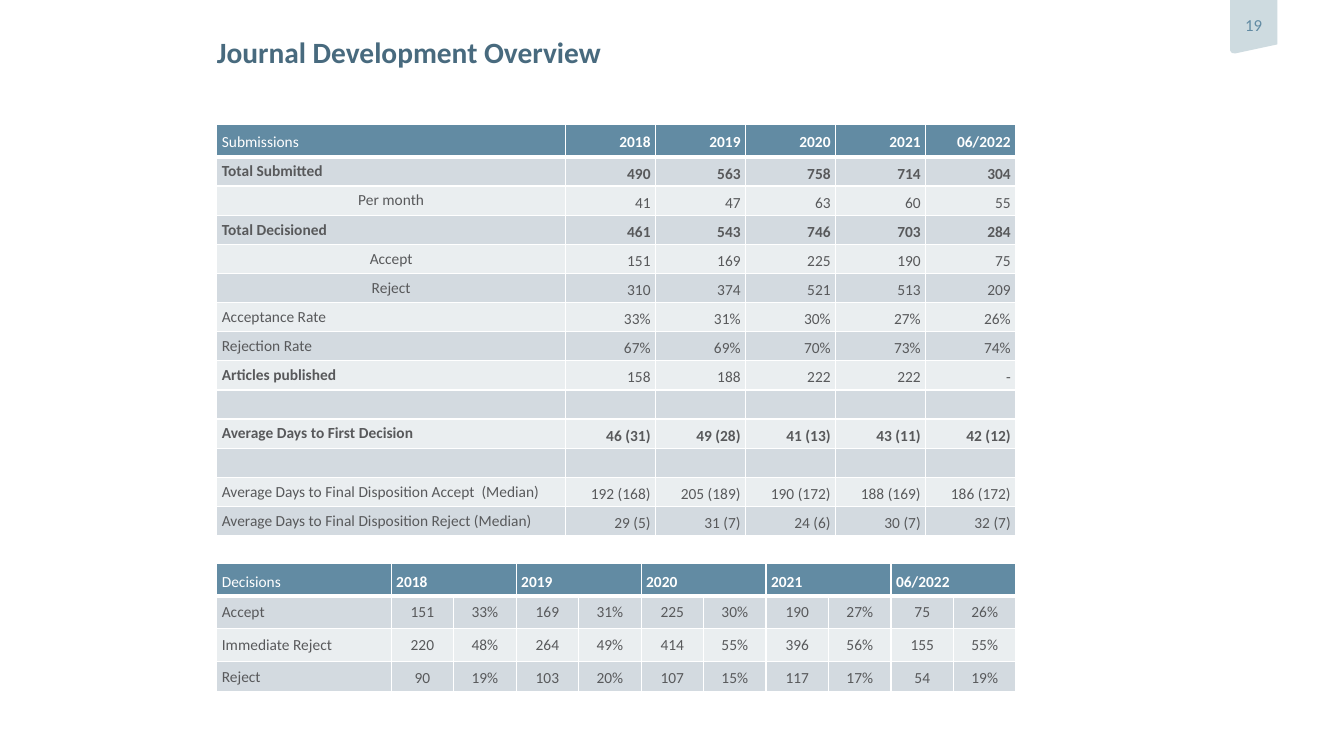
from lxml import etree
from pptx import Presentation
from pptx import util as u
from pptx.dml.color import RGBColor
from pptx.enum import text
from pptx.oxml import ns

WHITE = RGBColor(0xFF, 0xFF, 0xFF)
BLUE = RGBColor(0x62, 0x8B, 0xA3)
NAVY = RGBColor(0x48, 0x6A, 0x7E)
PALE = RGBColor(0xCE, 0xDB, 0xE0)
GRAY = RGBColor(0x58, 0x59, 0x5B)
BANDS = RGBColor(0xD3, 0xDA, 0xE0), RGBColor(0xEA, 0xEE, 0xF0)
LEFT, MID, RIGHT = text.PP_ALIGN.LEFT, text.PP_ALIGN.CENTER, text.PP_ALIGN.RIGHT

YEARS = ["2018", "2019", "2020", "2021", "06/2022"]
BOLD = "Total Submitted", "Total Decisioned", "Average Days to First Decision"
INNER = "Per month", "Accept", "Reject"
BLANK = [""] * 6
SUBMITS = [
    ["Total Submitted", "490", "563", "758", "714", "304"],
    ["Per month", "41", "47", "63", "60", "55"],
    ["Total Decisioned", "461", "543", "746", "703", "284"],
    ["Accept", "151", "169", "225", "190", "75"],
    ["Reject", "310", "374", "521", "513", "209"],
    ["Acceptance Rate", "33%", "31%", "30%", "27%", "26%"],
    ["Rejection Rate", "67%", "69%", "70%", "73%", "74%"],
    ["Articles published", "158", "188", "222", "222", "-"],
    BLANK,
    ["Average Days to First Decision", "46 (31)", "49 (28)", "41 (13)", "43 (11)", "42 (12)"],
    BLANK,
    ["Average Days to Final Disposition Accept  (Median)",
     "192 (168)", "205 (189)", "190 (172)", "188 (169)", "186 (172)"],
    ["Average Days to Final Disposition Reject (Median)",
     "29 (5)", "31 (7)", "24 (6)", "30 (7)", "32 (7)"],
]
VERDICTS = [
    ["Accept", "151", "33%", "169", "31%", "225", "30%", "190", "27%", "75", "26%"],
    ["Immediate Reject", "220", "48%", "264", "49%", "414", "55%", "396", "56%", "155", "55%"],
    ["Reject", "90", "19%", "103", "20%", "107", "15%", "117", "17%", "54", "19%"],
]


class Deck:
    """Style and current slide; lengths are percent of slide width and height."""
    face, size = "Calibri", 11

    def __init__(self):
        self.prs = Presentation()
        self.prs.slide_width, self.prs.slide_height = u.Inches(13.33), u.Inches(7.5)
        self.slide = self.prs.slides.add_slide(self.prs.slide_layouts[5])

    def x(self, part):
        return u.Emu(round(self.prs.slide_width * part / 100))

    def y(self, part):
        return u.Emu(round(self.prs.slide_height * part / 100))

    def label(self, frame, words, color, size=size, bold=False, align=LEFT, pitch=None):
        para = frame.paragraphs[0]
        para.text, para.alignment = words, align
        if pitch:
            para.line_spacing = pitch
        font = para.font
        font.name, font.size, font.bold = self.face, u.Pt(size), bold
        font.color.rgb = color
        if not words:
            etree.SubElement(para._p, ns.qn("a:endParaRPr"), sz=str(size * 100))

    def pad(self, frame, bottom=0):
        frame.margin_left = frame.margin_right = frame.margin_top = 0
        frame.margin_bottom = u.Inches(bottom)

    def title(self, words, left, top, wide, high):
        box = self.slide.shapes.title
        box.left, box.top = self.x(left), self.y(top)
        box.width, box.height = self.x(wide), self.y(high)
        frame = box.text_frame
        self.pad(frame)
        frame.auto_size = text.MSO_AUTO_SIZE.NONE
        frame.vertical_anchor = text.MSO_ANCHOR.TOP
        self.label(frame, words, NAVY, 21, True)

    def tag(self, words, dots):
        spots = [(self.x(a), self.y(b)) for a, b in dots]
        pen = self.slide.shapes.build_freeform(*spots[0])
        pen.add_line_segments(spots[1:], close=True)
        shape = pen.convert_to_shape()
        shape.shadow.inherit = False
        shape.fill.solid()
        shape.fill.fore_color.rgb = PALE
        shape.line.fill.background()
        frame = shape.text_frame
        self.pad(frame, 0.04)
        frame.word_wrap = False
        frame.vertical_anchor = text.MSO_ANCHOR.MIDDLE
        self.label(frame, words, BLUE, 12, align=MID)

    def grid(self, left, top, cols, rows):
        frame = self.slide.shapes.add_table(
            len(rows), len(cols), self.x(left), self.y(top),
            self.x(sum(cols)), self.y(sum(rows)))
        table = frame.table
        table.horz_banding = False
        for col, wide in zip(table.columns, cols):
            col.width = self.x(wide)
        for row, high in zip(table.rows, rows):
            row.height = self.y(high)
        return table

    def cell(self, cell, fill, words, color, side=0.05, edge=0.05, base=1,
             anchor=text.MSO_ANCHOR.MIDDLE, **look):
        cell.margin_left = cell.margin_right = u.Inches(side)
        cell.margin_top = cell.margin_bottom = u.Inches(edge)
        cell.vertical_anchor = anchor
        # White rules go ahead of the fill
        for name, wide in zip(("lnL", "lnR", "lnT", "lnB"), (1, 1, 1, base)):
            line = etree.SubElement(cell._tc.get_or_add_tcPr(), ns.qn("a:" + name),
                                    w=str(u.Pt(wide)))
            paint = etree.SubElement(line, ns.qn("a:solidFill"))
            etree.SubElement(paint, ns.qn("a:srgbClr"), val=str(WHITE))
        cell.fill.solid()
        cell.fill.fore_color.rgb = fill
        self.label(cell.text_frame, words, color, **look)

    def head(self, table, words, align, span=1):
        self.cell(table.cell(0, 0), BLUE, words, WHITE, base=3, pitch=1.2)
        for i, year in enumerate(YEARS):
            first = 1 + i * span
            for col in range(first, first + span):
                self.cell(table.cell(0, col), BLUE, year if col == first else "",
                          WHITE, base=3, bold=True, align=align, pitch=1.2)
            if span > 1:
                table.cell(0, first).merge(table.cell(0, first + span - 1))

    def body(self, table, data, inner=(), **look):
        for r, (name, *values) in enumerate(data, 1):
            fill = BANDS[(r - 1) % 2]
            bold = name in BOLD
            self.cell(table.cell(r, 0), fill, name, GRAY,
                      bold=bold or name == "Articles published",
                      align=MID if name in inner else LEFT)
            for c, value in enumerate(values, 1):
                self.cell(table.cell(r, c), fill, value, GRAY, bold=bold, **look)


def main():
    deck = Deck()
    left = 16.13

    # Page tag and title
    deck.tag("19", [(91.52, 0), (95.05, 0), (95.05, 5.87), (91.9, 7.07),
                    (91.65, 7), (91.52, 6.67)])
    deck.title("Journal Development Overview", left, 4.53, 67.6, 5.47)

    # Submissions by year
    table = deck.grid(left, 16.4, [25.96] + [6.7] * 5, [4.33] + [3.84] * 13)
    deck.head(table, "Submissions", RIGHT)
    deck.body(table, SUBMITS, INNER, edge=0, align=RIGHT, pitch=u.Pt(16.8))

    # Decisions: count and share for each year
    table = deck.grid(left, 74.53, [12.98] + [4.65] * 10, [4.33, 4.27, 4.4, 3.9])
    deck.head(table, "Decisions", LEFT, 2)
    deck.body(table, VERDICTS, side=0.07, edge=0.04, anchor=text.MSO_ANCHOR.TOP,
              align=MID, pitch=1.15)

    deck.prs.save("out.pptx")


if __name__ == "__main__":
    main()
